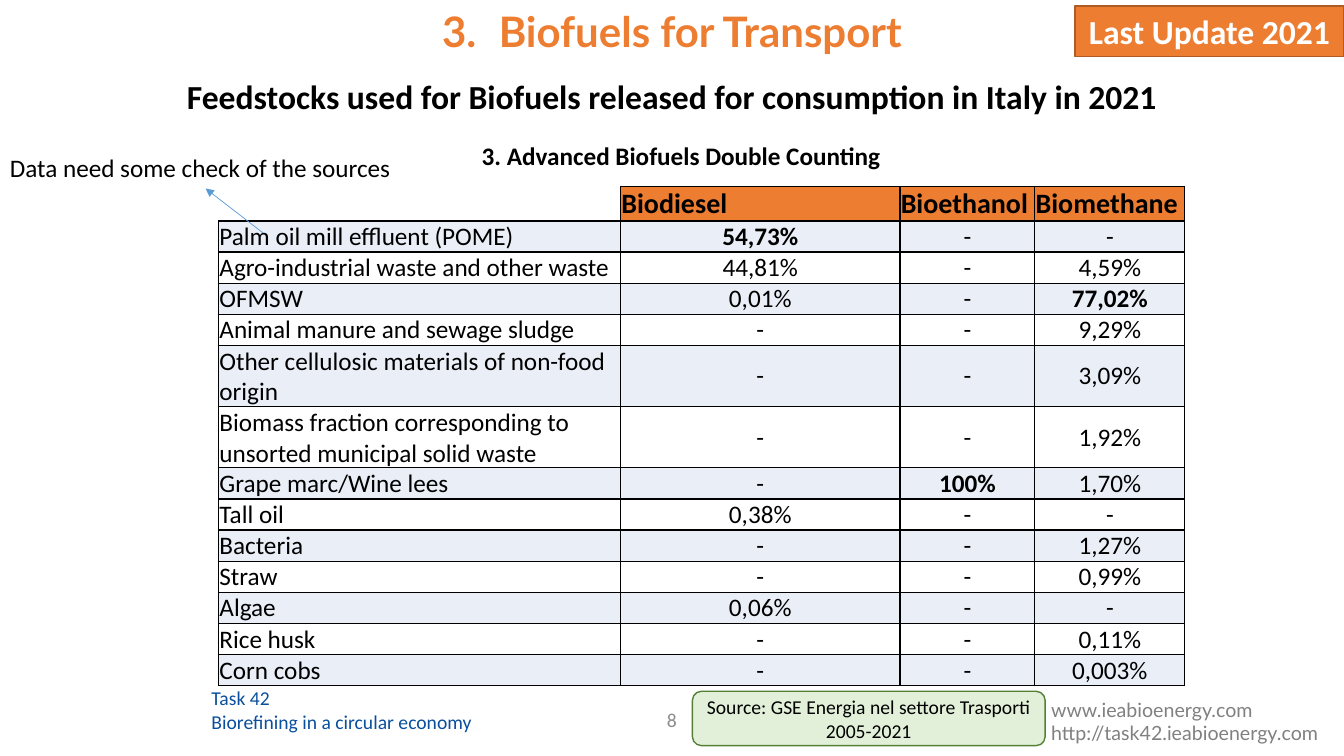
import lxml.etree
import pptx
import pptx.dml.color
import pptx.enum.shapes
import pptx.enum.text
import pptx.oxml
import pptx.oxml.ns
import pptx.util

Cm, Pt = pptx.util.Cm, pptx.util.Pt
Color = pptx.dml.color.RGBColor
Align = pptx.enum.text.PP_ALIGN
Anchor = pptx.enum.text.MSO_ANCHOR
Shape = pptx.enum.shapes.MSO_SHAPE
qn = pptx.oxml.ns.qn

BLACK = Color(0, 0, 0)
WHITE = Color(255, 255, 255)
ORANGE = Color(0xED, 0x7D, 0x31)
RUST = Color(0xAF, 0x5C, 0x24)
PALE = Color(0xEA, 0xEF, 0xF7)
MINT = Color(0xE2, 0xF0, 0xD9)
GREEN = Color(0x53, 0x80, 0x35)
NAVY = Color(0x0A, 0x4F, 0x9D)
BLUE = Color(0x5B, 0x9B, 0xD5)
GREY = Color(0x80, 0x80, 0x80)
SILVER = Color(0x8C, 0x8C, 0x8C)

HEADS = ["", "Biodiesel", "Bioethanol", "Biomethane"]
ROWS = [
    ("Palm oil mill effluent (POME)", "54,73%", "-", "-"),
    ("Agro-industrial waste and other waste", "44,81%", "-", "4,59%"),
    ("OFMSW", "0,01%", "-", "77,02%"),
    ("Animal manure and sewage sludge", "-", "-", "9,29%"),
    ("Other cellulosic materials of non-food origin", "-", "-", "3,09%"),
    ("Biomass fraction corresponding to unsorted municipal solid waste",
     "-", "-", "1,92%"),
    ("Grape marc/Wine lees", "-", "100%", "1,70%"),
    ("Tall oil", "0,38%", "-", "-"),
    ("Bacteria", "-", "-", "1,27%"),
    ("Straw", "-", "-", "0,99%"),
    ("Algae", "0,06%", "-", "-"),
    ("Rice husk", "-", "-", "0,11%"),
    ("Corn cobs", "-", "-", "0,003%"),
]
PEAKS = {"54,73%", "77,02%", "100%"}
WIDTHS = [10.13, 7.04, 3.4, 3.78]


def style(para, size, color=BLACK, bold=False, align=Align.LEFT, face="Calibri"):
    """Set the alignment and font of a paragraph."""
    para.alignment = align
    font = para.font
    font.name, font.size, font.bold = face, Pt(size), bold
    font.color.rgb = color


def label(slide, box, text, size, wrap=True, anchor=Anchor.TOP, **looks):
    """Add a text box and return its paragraph."""
    frame = slide.shapes.add_textbox(*map(Cm, box)).text_frame
    frame.word_wrap, frame.vertical_anchor = wrap, anchor
    para = frame.paragraphs[0]
    para.text = text
    style(para, size, **looks)
    return para


def badge(slide, box, kind, text, size, fill, line, anchor, **looks):
    """Add a filled shape with centred text."""
    shape = slide.shapes.add_shape(kind, *map(Cm, box))
    shape.shadow.inherit = False
    shape.fill.solid()
    shape.fill.fore_color.rgb = fill
    shape.line.color.rgb, shape.line.width = line, Pt(1)
    frame = shape.text_frame
    frame.word_wrap, frame.vertical_anchor = True, anchor
    frame.text = text
    style(frame.paragraphs[0], size, align=Align.CENTER, **looks)


def header(slide, box):
    """Place the numbered title, update badge and two headings."""
    left, top, width = box
    para = label(slide, (left, top, width, 2.46), "Biofuels for Transport", 30,
                 color=ORANGE, bold=True, align=Align.CENTER, face="Lato")
    props = para._p.get_or_add_pPr()
    props.set("marL", str(Cm(1.43)))
    props.set("indent", str(-Cm(1.43)))
    number = lxml.etree.SubElement(props, qn("a:buAutoNum"))
    number.set("type", "arabicPeriod")
    number.set("startAt", "3")
    para.line_spacing = Pt(32.5)
    badge(slide, (left + width - 6.78, top, 6.78, 1.27), Shape.RECTANGLE,
          "Last Update 2021", 24, ORANGE, RUST, Anchor.TOP, color=WHITE, bold=True)
    label(slide, (left, top + 1.63, width, 1.27),
          "Feedstocks used for Biofuels released for consumption in Italy in 2021",
          24, bold=True, align=Align.CENTER)
    label(slide, (left + 11.89, top + 3.25, 11.13, 1.02),
          "3. Advanced Biofuels Double Counting", 18, bold=True,
          align=Align.JUSTIFY)


def border(cell, sides):
    """Draw thin black borders on the given sides and none on the others."""
    props = cell._tc.get_or_add_tcPr()
    for side in "LRTB":
        ink = '<a:solidFill><a:srgbClr val="000000"/></a:solidFill>'
        props.append(pptx.oxml.parse_xml(
            f'<a:ln{side} xmlns:a="{pptx.oxml.ns.nsdecls("a").split(chr(34))[1]}" '
            f'w="12700">{ink if side in sides else "<a:noFill/>"}</a:ln{side}>'))


def grid(slide, box):
    """Place the feedstock table."""
    table = slide.shapes.add_table(len(ROWS) + 1, len(HEADS), *map(Cm, box)).table
    table.first_row = table.horz_banding = False
    for col, width in zip(table.columns, WIDTHS):
        col.width = Cm(width)
    for i, row in enumerate([HEADS, *ROWS]):
        table.rows[i].height = Cm(0.69)
        for j, text in enumerate(row):
            cell = table.cell(i, j)
            cell.margin_left = cell.margin_right = cell.margin_top = Cm(0.02)
            cell.margin_bottom = 0
            value = i > 0 and j > 0
            cell.vertical_anchor = Anchor.MIDDLE if value else Anchor.BOTTOM
            cell.text = text
            style(cell.text_frame.paragraphs[0], 18 if i else 20,
                  bold=i == 0 or text in PEAKS,
                  align=Align.CENTER if value else Align.LEFT)
            border(cell, "LRTB" if text else "RB")
            if text:
                cell.fill.solid()
                cell.fill.fore_color.rgb = (
                    ORANGE if i == 0 else PALE if i % 2 else WHITE)
            else:
                cell.fill.background()


def remark(slide, box):
    """Place the data remark and the arrow from the table to it."""
    left, top, width, height = box
    label(slide, box, "Data need some check of the sources", 18, wrap=False)
    tip = left + width / 2, top + height + 0.02
    arrow = slide.shapes.add_connector(
        pptx.enum.shapes.MSO_CONNECTOR.STRAIGHT,
        Cm(tip[0] + 1.45), Cm(tip[1] + 1.12), Cm(tip[0]), Cm(tip[1]))
    arrow.line.color.rgb, arrow.line.width = BLUE, Pt(0.5)
    lxml.etree.SubElement(arrow.line._get_or_add_ln(),
                          qn("a:tailEnd")).set("type", "triangle")
    lxml.etree.SubElement(arrow._element.spPr, qn("a:effectLst"))


def footer(slide, box):
    """Place the task name, page number, source and web addresses."""
    left, top = box
    label(slide, (left + 14.07, top + 0.46, 5.72, 1.02), "8", 14,
          anchor=Anchor.MIDDLE, color=SILVER, align=Align.CENTER)
    label(slide, (left + 5.08, top, 7.62, 1.45),
          "Task 42\vBiorefining in a circular economy", 14, color=NAVY)
    label(slide, (left + 26.24, top + 0.28, 8.18, 1.45),
          "www.ieabioenergy.com http://task42.ieabioenergy.com", 14,
          color=GREY, face="Lato")
    badge(slide, (left + 17.45, top + 0.25, 8.89, 1.37), Shape.ROUNDED_RECTANGLE,
          "Source: GSE Energia nel settore Trasporti 2005-2021", 14,
          MINT, GREEN, Anchor.MIDDLE)


def main():
    """Build and save the slide."""
    deck = pptx.Presentation()
    deck.slide_width, deck.slide_height = Cm(33.87), Cm(19.05)
    slide = deck.slides.add_slide(deck.slide_layouts[6])
    footer(slide, (0, 17.17))
    header(slide, (0, 0.15, 33.87))
    grid(slide, (5.51, 4.7, sum(WIDTHS), 9.66))
    remark(slide, (0, 3.71, 10.36, 1.02))
    deck.save("out.pptx")


if __name__ == "__main__":
    main()
